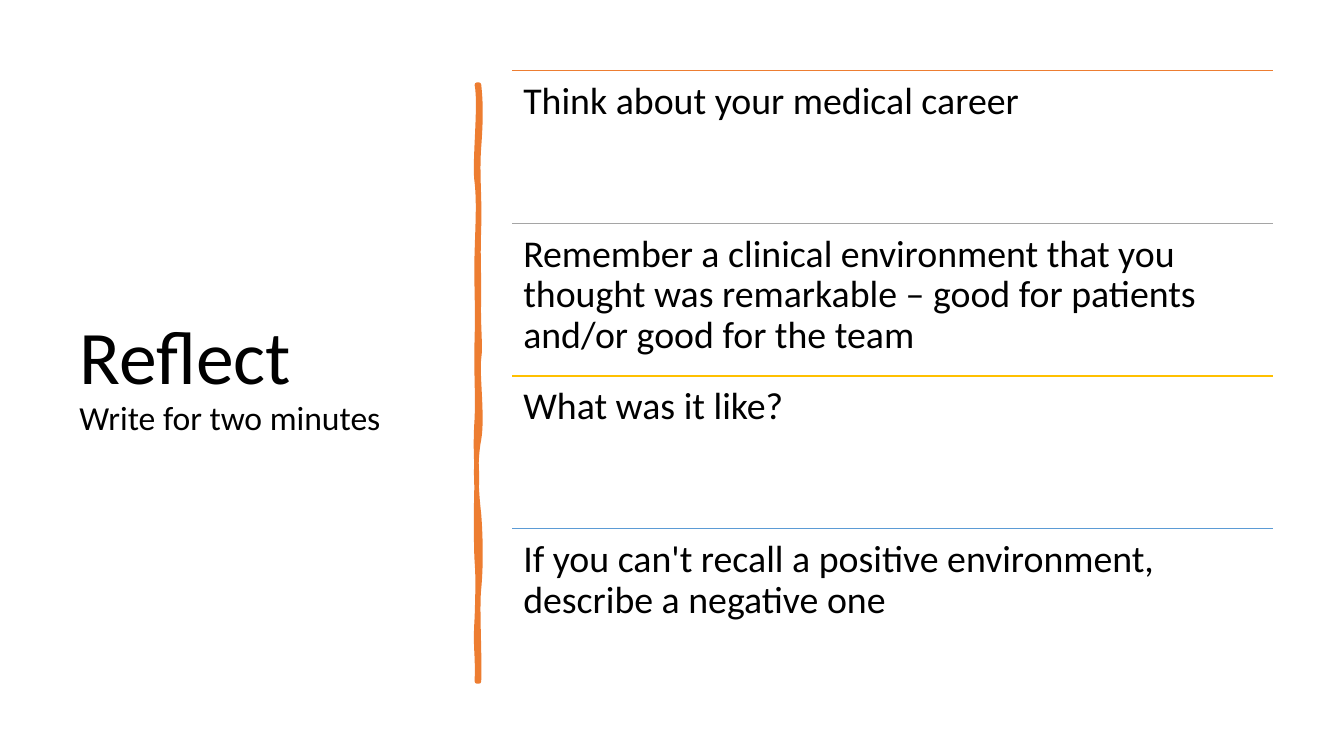
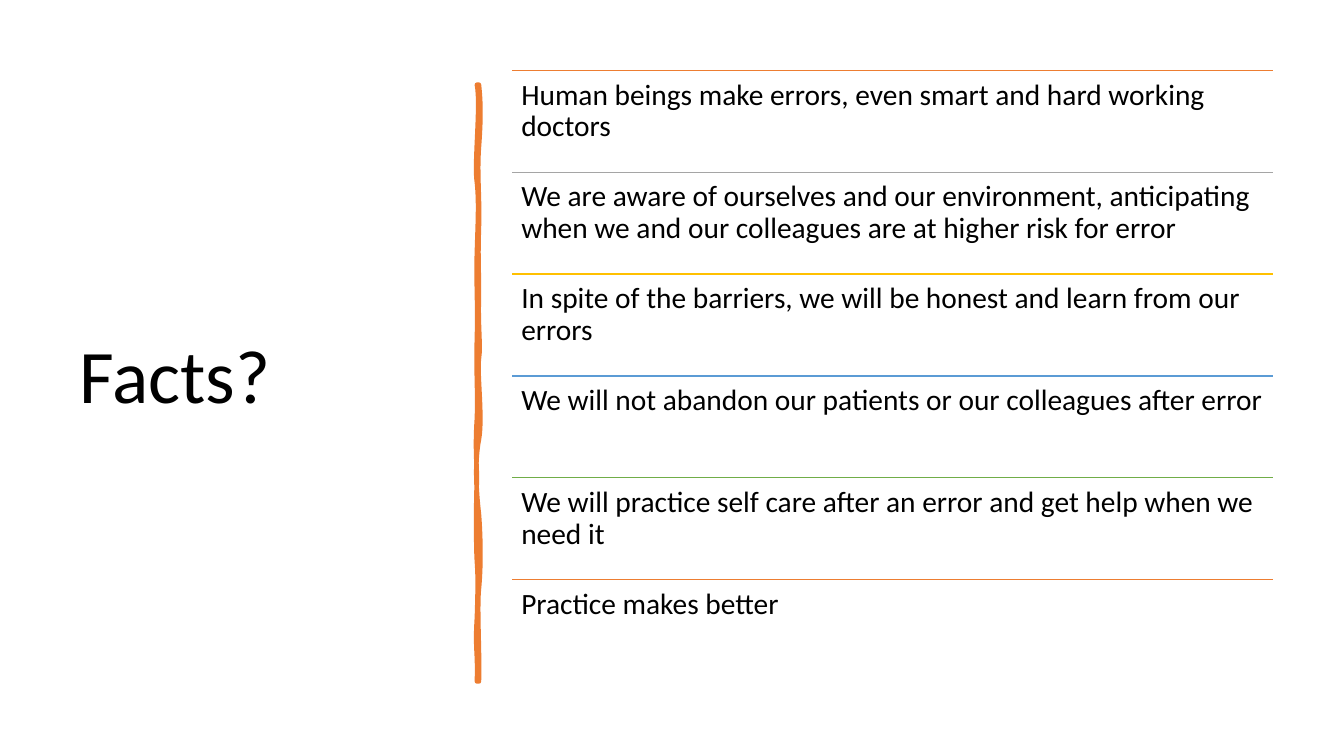
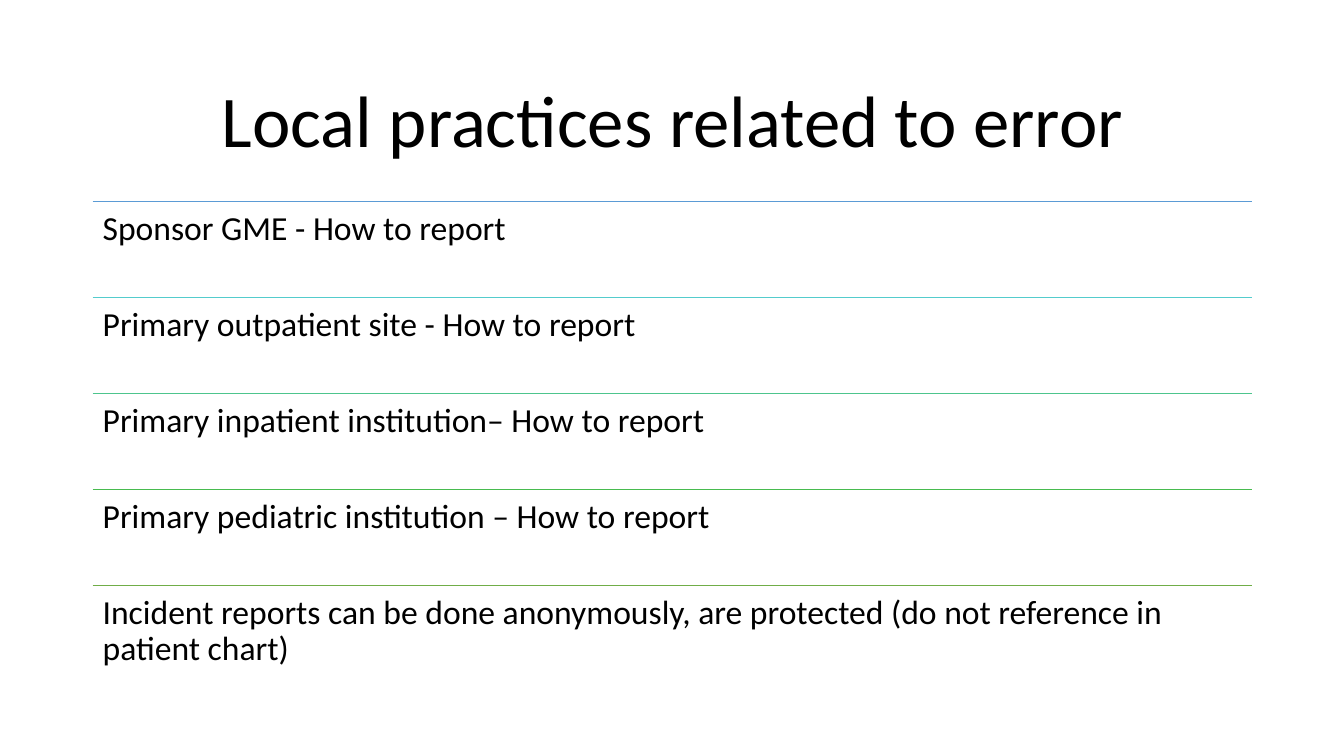
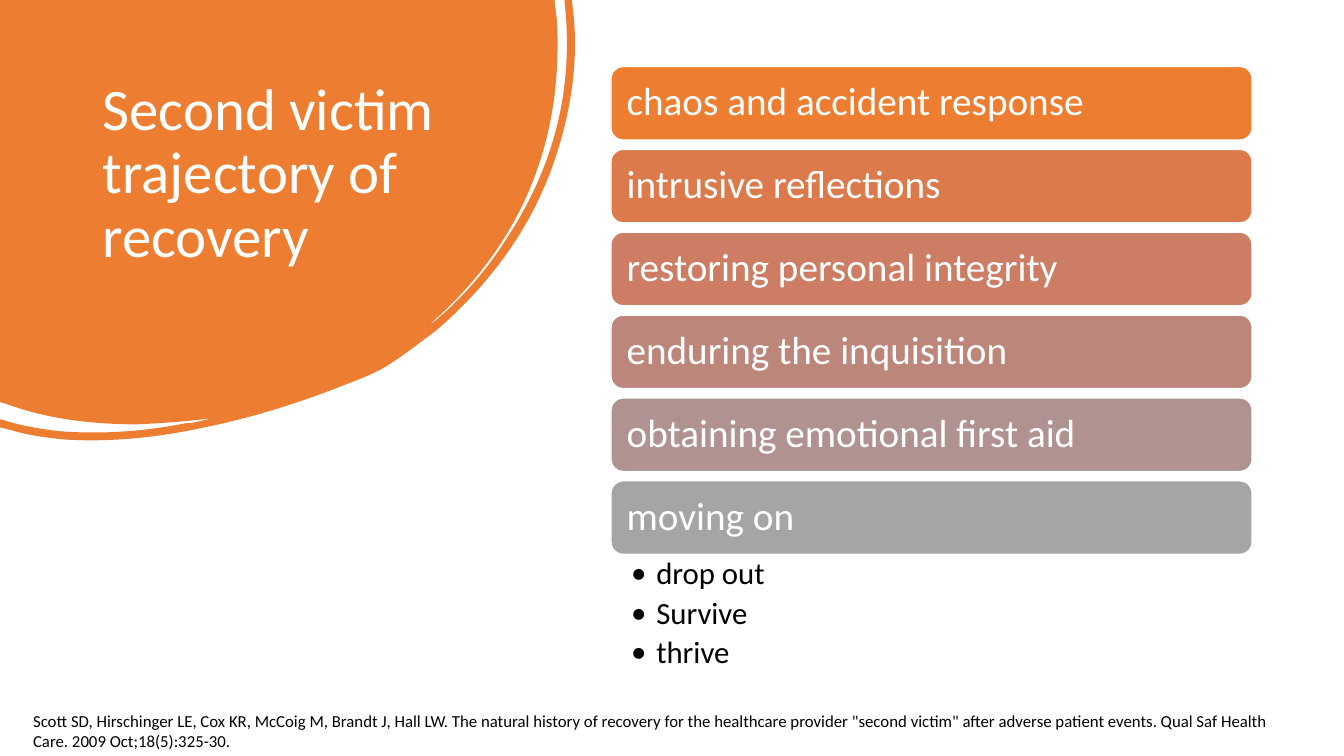
from dataclasses import dataclass

from lxml.etree import SubElement
from pptx import Presentation
from pptx.dml.color import RGBColor
from pptx.enum.shapes import MSO_CONNECTOR as Connector, MSO_SHAPE as Shape
from pptx.enum.text import MSO_ANCHOR as Anchor, PP_ALIGN as Align
from pptx.oxml.ns import qn
from pptx.util import Inches, Pt


@dataclass(frozen=True)
class Theme:
    font: str = "Calibri"
    black: str = "000000"
    white: str = "FFFFFF"
    orange: str = "ED7D31"
    gray: str = "A5A5A5"
    gold: str = "FFC000"
    blue: str = "5B9BD5"
    green: str = "70AD47"
    teal_to_green: tuple = ("54CCCD", "4DC58D", "48BB4F")
    orange_to_gray: tuple = ("DC7A4B", "CC7D64", "BD867B", "B09391")
    title_size: int = 54
    wide_title_size: int = 52
    blob_title_size: int = 42
    subtitle_size: int = 24
    stage_size: int = 28
    outcome_size: int = 22
    citation_size: int = 12
    line_spacing: float = 0.9


theme = Theme()


def fill_text(shape, lines, size, color=theme.black, inset=(0.1, 0.05),
              anchor=Anchor.TOP, **paragraph_format):
    """Write one paragraph per line and return the paragraphs."""
    frame = shape.text_frame
    side, edge = (Inches(length) for length in inset)
    frame_format = {"word_wrap": True, "vertical_anchor": anchor,
                    "margin_left": side, "margin_right": side,
                    "margin_top": edge, "margin_bottom": edge}
    for name, value in frame_format.items():
        setattr(frame, name, value)
    frame.text = "\n".join(lines)
    paragraph_format = {"alignment": Align.LEFT, "line_spacing": theme.line_spacing,
                        **paragraph_format}
    for para in frame.paragraphs:
        for name, value in paragraph_format.items():
            setattr(para, name, value)
        para.font.name = theme.font
        para.font.size = Pt(size)
        para.font.color.rgb = RGBColor.from_string(color)
    return frame.paragraphs


def draw_outline(page, start, segments, color):
    """Draw a closed outline; a pair is a line end, six numbers a Bézier curve."""
    builder = page.shapes.build_freeform(*map(Inches, start))
    builder.add_line_segments([tuple(map(Inches, segment[-2:])) for segment in segments])
    outline = builder.convert_to_shape()
    for line, segment in zip(list(outline.element.iter(qn("a:lnTo"))), segments):
        if len(segment) == 6:
            curve = line.makeelement(qn("a:cubicBezTo"), {})
            for x, y in zip(segment[::2], segment[1::2]):
                SubElement(curve, qn("a:pt"), x=str(Inches(x) - outline.left),
                           y=str(Inches(y) - outline.top))
            line.getparent().replace(line, curve)
    outline.shadow.inherit = False
    outline.fill.solid()
    outline.fill.fore_color.rgb = RGBColor.from_string(color)
    outline.line.fill.background()
    return outline


deck = Presentation()
deck.slide_width, deck.slide_height = Inches(13.33), Inches(7.5)
blank = deck.slide_layouts[6]

# Slides 1 to 3: a title and a list with a coloured rule above each row
brush_bar = [
    (4.77, 1.02, 4.77, 1.19, 4.75, 1.46), (4.73, 1.73, 4.76, 1.95, 4.75, 2.26),
    (4.74, 2.57, 4.75, 2.62, 4.75, 2.94), (4.74, 3.25, 4.77, 3.42, 4.75, 3.56),
    (4.73, 3.7, 4.79, 4.14, 4.75, 4.36), (4.71, 4.57, 4.72, 4.84, 4.75, 5.1),
    (4.77, 5.36, 4.77, 5.64, 4.75, 5.84), (4.73, 6.03, 4.76, 6.5, 4.75, 6.76),
    (4.74, 6.76, 4.73, 6.76, 4.73, 6.76),
    (4.74, 6.46, 4.71, 6.44, 4.73, 6.13), (4.74, 5.83, 4.74, 5.7, 4.73, 5.57),
    (4.72, 5.44, 4.72, 4.95, 4.73, 4.77), (4.73, 4.59, 4.71, 4.45, 4.73, 4.15),
    (4.74, 3.86, 4.72, 3.73, 4.73, 3.35), (4.74, 2.98, 4.72, 2.81, 4.73, 2.5),
    (4.74, 2.18, 4.75, 2, 4.73, 1.81), (4.7, 1.63, 4.77, 1.04, 4.73, 0.84),
    (4.74, 0.84, 4.74, 0.84, 4.75, 0.84),
]
side_layout = {"title_box": (0.69, 0.7, 3.74, 6.11), "title_size": theme.title_size,
               "title_align": Align.LEFT, "list_box": (5.08, 0.7, 7.55, 6.06),
               "has_bar": True}
wide_layout = {"title_box": (0.92, 0.61, 11.5, 1.24), "title_size": theme.wide_title_size,
               "title_align": Align.CENTER, "list_box": (0.92, 2, 11.5, 4.76),
               "has_bar": False}
accents = (theme.orange, theme.gray, theme.gold, theme.blue, theme.green, theme.orange)

ruled_pages = [
    {**side_layout, "title": "Reflect", "subtitle": "Write for two minutes",
     "size": 27, "inset": 0.11, "colors": accents, "rows": [
         "Think about your medical career",
         "Remember a clinical environment that you thought was remarkable – "
         "good for patients and/or good for the team",
         "What was it like?",
         "If you can't recall a positive environment, describe a negative one"]},
    {**side_layout, "title": "Facts?", "subtitle": "",
     "size": 21, "inset": 0.09, "colors": accents, "rows": [
         "Human beings make errors, even smart and hard working doctors",
         "We are aware of ourselves and our environment, anticipating when we "
         "and our colleagues are at higher risk for error",
         "In spite of the barriers, we will be honest and learn from our errors",
         "We will not abandon our patients or our colleagues after error",
         "We will practice self care after an error and get help when we need it",
         "Practice makes better"]},
    {**wide_layout, "title": "Local practices related to error", "subtitle": "",
     "size": 24, "inset": 0.1,
     "colors": (theme.blue, *theme.teal_to_green, theme.green), "rows": [
         "Sponsor GME - How to report",
         "Primary outpatient site - How to report",
         "Primary inpatient institution– How to report",
         "Primary pediatric institution – How to report",
         "Incident reports can be done anonymously, are protected "
         "(do not reference in patient chart)"]},
]

for content in ruled_pages:
    page = deck.slides.add_slide(blank)
    title = page.shapes.add_textbox(*map(Inches, content["title_box"]))
    para = fill_text(title, [content["title"]], content["title_size"],
                     anchor=Anchor.MIDDLE, alignment=content["title_align"])[0]
    if content["subtitle"]:
        para.add_line_break()
        span = para.add_run()
        span.text = content["subtitle"]
        span.font.size = Pt(theme.subtitle_size)
    if content["has_bar"]:
        bar = draw_outline(page, (4.75, 0.84), brush_bar, theme.orange)
        bar.line.color.rgb = RGBColor.from_string(theme.orange)
        bar.line.width = Pt(3.25)

    left, top, width, height = content["list_box"]
    row_height = height / len(content["rows"])
    for index, (text, color) in enumerate(zip(content["rows"], content["colors"])):
        row_top = Inches(top + index * row_height)
        rule = page.shapes.add_connector(Connector.STRAIGHT, Inches(left), row_top,
                                         Inches(left + width), row_top)
        rule.line.color.rgb = RGBColor.from_string(color)
        rule.line.width = Pt(1)
        SubElement(rule.element.spPr, qn("a:effectLst"))
        row = page.shapes.add_textbox(Inches(left), row_top, Inches(width),
                                      Inches(row_height))
        fill_text(row, [text], content["size"], inset=(content["inset"],) * 2)

# Slide 4: stages of recovery
page = deck.slides.add_slide(blank)
blob = [
    (5.5, 0), (5.52, 0.17),
    (5.53, 0.26, 5.53, 0.36, 5.53, 0.45), (5.53, 1.01, 5.42, 1.54, 5.18, 2.04),
    (4.96, 2.49, 4.65, 2.88, 4.27, 3.21), (4.29, 3.21, 4.3, 3.19, 4.32, 3.18),
    (4.59, 2.95, 4.82, 2.69, 5.01, 2.39), (5.43, 1.76, 5.65, 1.07, 5.62, 0.3),
    (5.62, 0.21, 5.61, 0.12, 5.6, 0.03),
    (5.6, 0), (5.67, 0), (5.68, 0.07),
    (5.74, 0.54, 5.68, 1.02, 5.53, 1.5), (5.33, 2.14, 4.97, 2.68, 4.48, 3.14),
    (4.39, 3.23, 4.29, 3.31, 4.19, 3.38), (4.09, 3.46, 3.99, 3.53, 3.87, 3.61),
    (3.75, 3.69, 3.6, 3.75, 3.44, 3.81), (2.99, 3.99, 2.52, 4.14, 2.03, 4.24),
    (1.57, 4.34, 1.1, 4.39, 0.63, 4.36), (0.45, 4.34, 0.28, 4.32, 0.12, 4.27),
    (0, 4.24), (0, 4.16), (0.04, 4.17),
    (0.23, 4.23, 0.42, 4.26, 0.61, 4.28), (1.03, 4.31, 1.43, 4.28, 1.84, 4.2),
    (1.89, 4.2, 1.93, 4.19, 1.98, 4.18), (2.02, 4.17, 2.06, 4.16, 2.1, 4.15),
    (1.86, 4.18, 1.61, 4.2, 1.36, 4.21), (0.92, 4.21, 0.48, 4.16, 0.07, 4.01),
    (0, 3.99),
]
draw_outline(page, (0, 0), blob, theme.orange)
title = page.shapes.add_textbox(Inches(0.92), Inches(0.74), Inches(3.52), Inches(2.22))
fill_text(title, ["Second victim trajectory of recovery"], theme.blob_title_size,
          theme.white)

stages = ["chaos and accident response", "intrusive reflections",
          "restoring personal integrity", "enduring the inquisition",
          "obtaining emotional first aid", "moving on"]
stage_colors = (theme.orange, *theme.orange_to_gray, theme.gray)
first_top, last_top = 0.66, 4.77
pitch = (last_top - first_top) / (len(stages) - 1)
for index, (text, color) in enumerate(zip(stages, stage_colors)):
    stage = page.shapes.add_shape(Shape.ROUNDED_RECTANGLE, Inches(6.06),
                                  Inches(first_top + index * pitch),
                                  Inches(6.36), Inches(0.73))
    stage.shadow.inherit = False
    stage.fill.solid()
    stage.fill.fore_color.rgb = RGBColor.from_string(color)
    stage.line.color.rgb = RGBColor.from_string(theme.white)
    stage.line.width = Pt(1)
    fill_text(stage, [text], theme.stage_size, theme.white, inset=(0.12, 0.12),
              anchor=Anchor.MIDDLE)

outcomes = page.shapes.add_textbox(Inches(6.06), Inches(5.5), Inches(6.36), Inches(1.24))
for para in fill_text(outcomes, ["drop out", "Survive", "thrive"], theme.outcome_size,
                      inset=(0.2, 0.04), space_after=Pt(4.4)):
    properties = para._p.get_or_add_pPr()
    properties.set("marL", str(Inches(0.25)))
    properties.set("indent", str(Inches(-0.25)))
    for tag, values in (("a:buFont", {"typeface": theme.font}),
                        ("a:buChar", {"char": "•"})):
        properties.insert_element_before(properties.makeelement(qn(tag), values),
                                         "a:tabLst", "a:defRPr", "a:extLst")

citation = page.shapes.add_textbox(Inches(0.23), Inches(7), Inches(12.47), Inches(0.71))
fill_text(citation, [
    "Scott SD, Hirschinger LE, Cox KR, McCoig M, Brandt J, Hall LW. The natural history "
    "of recovery for the healthcare provider \"second victim\" after adverse patient "
    "events. Qual Saf Health Care. 2009 Oct;18(5):325-30."],
    theme.citation_size, line_spacing=1.0)

deck.save("out.pptx")
